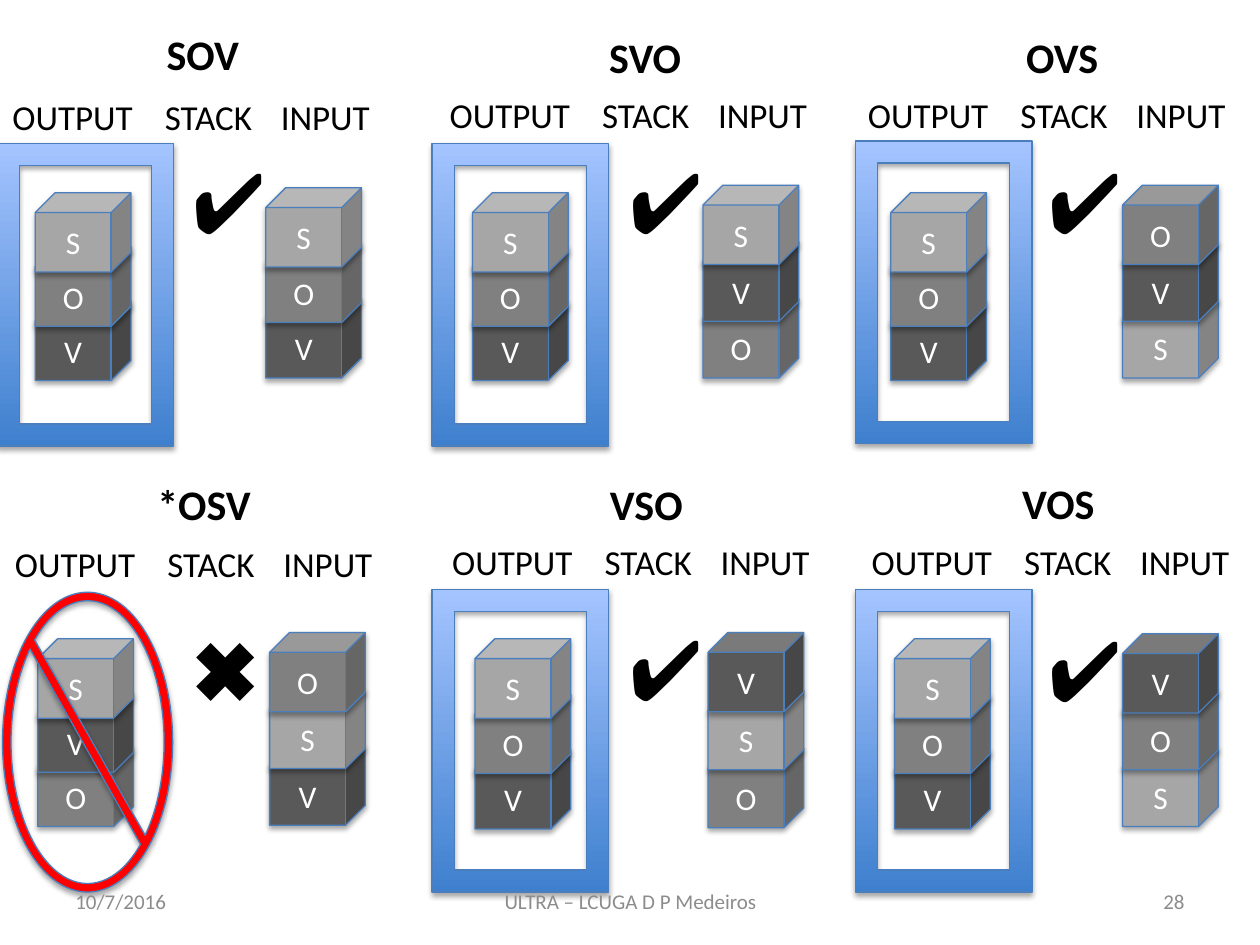
"""Build a slide comparing six word orders as stack-sorting diagrams."""
from dataclasses import dataclass

from lxml import etree
from pptx import Presentation
from pptx.dml.color import RGBColor
from pptx.enum.shapes import MSO_SHAPE
from pptx.enum.text import MSO_ANCHOR, PP_ALIGN
from pptx.oxml.ns import qn
from pptx.util import Inches, Pt

CUBE, FRAME, NO_SIGN = MSO_SHAPE.CUBE, MSO_SHAPE.FRAME, MSO_SHAPE.NO_SYMBOL
LEFT, CENTER, RIGHT = PP_ALIGN.LEFT, PP_ALIGN.CENTER, PP_ALIGN.RIGHT
TOP, MIDDLE = MSO_ANCHOR.TOP, MSO_ANCHOR.MIDDLE


@dataclass(frozen=True)
class Theme:
    font: str = "Calibri"
    mark_font: str = "Arial"
    title_size: int = 24
    label_size: int = 20
    cube_size: int = 18
    mark_size: int = 48
    footer_size: int = 12
    ink: str = "000000"
    cube_ink: str = "FFFFFF"
    footer_ink: str = "8C8C8C"
    outline: str = "4B7EBC"
    forbidden: str = "FF0000"
    frame_bottom: str = "3F80CE"
    frame_top: str = "A4C4FF"


@dataclass(frozen=True)
class Panel:
    order: str
    title_center: float
    title_top: float
    left: float
    label_top: float
    sign_left: float
    sign_top: float
    output_top: float
    output_step: float
    mark_left: float
    mark_top: float
    input_left: float
    input_top: float
    input_step: float
    output: str = "SOV"
    allowed: bool = True


THEME = Theme()
CUBE_FILLS = {"S": "A6A6A6", "O": "808080", "V": "595959"}
LABELS = (("OUTPUT", 0, 1.21), ("STACK", 1.21, 0.92), ("INPUT", 2.13, 1.08))
PANELS = (
    Panel("SOV", 1.61, 0.18, 0, 0.71, -0.02, 1.14, 1.53, 0.43,
          1.43, 1.14, 2.11, 1.49, 0.44),
    Panel("SVO", 5.12, 0.2, 3.47, 0.69, 3.43, 1.14, 1.53, 0.43,
          4.9, 1.14, 5.58, 1.47, 0.45),
    Panel("OVS", 8.43, 0.2, 6.79, 0.69, 6.79, 1.12, 1.53, 0.43,
          8.22, 1.14, 8.91, 1.47, 0.45),
    Panel("OSV", 1.62, 3.75, 0.02, 4.26, 0.02, 4.7, 5.07, 0.43,
          1.43, 4.85, 2.14, 5.02, 0.45, "SVO", False),
    Panel("VSO", 5.13, 3.75, 3.49, 4.24, 3.43, 4.68, 5.07, 0.44,
          4.9, 4.84, 5.62, 5.02, 0.46),
    Panel("VOS", 8.4, 3.74, 6.82, 4.24, 6.79, 4.68, 5.07, 0.44,
          8.22, 4.85, 8.91, 5.03, 0.45),
)
FOOTERS = (
    ("10/7/2016", 0.5, 2.33, LEFT),
    ("ULTRA – LCUGA D P Medeiros", 3.42, 3.17, CENTER),
    ("28", 7.17, 2.33, RIGHT),
)


def write(shape, text: str, size: int, color: str, align=LEFT, anchor=TOP,
          font: str = THEME.font, bold: bool = False) -> None:
    """Put one formatted line of text in a shape."""
    frame = shape.text_frame
    frame.word_wrap = True
    frame.vertical_anchor = anchor
    para = frame.paragraphs[0]
    para.alignment = align
    span = para.add_run()
    span.text = text
    for name, value in {"name": font, "size": Pt(size), "bold": bold}.items():
        setattr(span.font, name, value)
    span.font.color.rgb = RGBColor.from_string(color)


def add_text(page, box: tuple, text: str, size: int, color: str, **format_values) -> None:
    """Add a text box at left, top, width, height."""
    write(page.shapes.add_textbox(*map(Inches, box)), text, size, color, **format_values)


def add_solid(page, kind, box: tuple, fill: str):
    """Add an outlined preset shape with a soft shadow below it."""
    shape = page.shapes.add_shape(kind, *map(Inches, box))
    shape.fill.solid()
    shape.fill.fore_color.rgb = RGBColor.from_string(fill)
    shape.line.color.rgb = RGBColor.from_string(THEME.outline)
    shape.line.width = Pt(0.75)
    shape.shadow.inherit = False
    effects = shape.element.spPr.find(qn("a:effectLst"))
    shadow = etree.SubElement(effects, qn("a:outerShdw"), blurRad=str(Pt(3.1)),
                              dist=str(Pt(1.8)), dir="5400000", rotWithShape="0")
    color = etree.SubElement(shadow, qn("a:srgbClr"), val="000000")
    etree.SubElement(color, qn("a:alpha"), val="35000")
    return shape


def add_stack(page, letters: str, left: float, top: float, step: float) -> None:
    """Pile up cubes from the bottom, reading downwards."""
    for level, letter in reversed(list(enumerate(letters))):
        cube = add_solid(page, CUBE, (left, top + level * step, 0.76, 0.63), CUBE_FILLS[letter])
        write(cube, letter, THEME.cube_size, THEME.cube_ink, CENTER, MIDDLE)


def add_sign(page, panel: Panel) -> None:
    """Frame an allowed output or strike out a forbidden one."""
    if panel.allowed:
        sign = add_solid(page, FRAME, (panel.sign_left, panel.sign_top, 1.4, 2.4),
                         THEME.frame_bottom)
        sign.fill.gradient()
        sign.fill.gradient_angle = 90
        for stop, color in zip(sign.fill.gradient_stops, (THEME.frame_bottom, THEME.frame_top)):
            stop.color.rgb = RGBColor.from_string(color)
    else:
        sign = add_solid(page, NO_SIGN, (panel.sign_left, panel.sign_top, 1.35, 2.38),
                         THEME.forbidden)
        sign.adjustments[0] = 0.05


def add_panel(page, panel: Panel) -> None:
    """Draw one word order with its output, mark and input."""
    title = panel.order if panel.allowed else f"*{panel.order}"
    add_text(page, (panel.title_center - 0.5, panel.title_top, 1, 0.5), title,
             THEME.title_size, THEME.ink, align=CENTER, bold=True)
    for label, offset, width in LABELS:
        add_text(page, (panel.left + offset, panel.label_top, width, 0.44), label,
                 THEME.label_size, THEME.ink)
    add_stack(page, panel.output, panel.left + 0.28, panel.output_top, panel.output_step)
    add_sign(page, panel)
    add_text(page, (panel.mark_left, panel.mark_top, 1.44, 0.91),
             "✔" if panel.allowed else "✖", THEME.mark_size, THEME.ink, font=THEME.mark_font)
    add_stack(page, panel.order, panel.input_left, panel.input_top, panel.input_step)


def main() -> None:
    """Build and save the deck."""
    deck = Presentation()
    deck.slide_width, deck.slide_height = Inches(10), Inches(7.5)
    page = deck.slides.add_slide(deck.slide_layouts[6])
    for panel in PANELS:
        add_panel(page, panel)
    for text, left, width, align in FOOTERS:
        add_text(page, (left, 6.95, width, 0.4), text, THEME.footer_size,
                 THEME.footer_ink, align=align, anchor=MIDDLE)
    deck.save("out.pptx")


if __name__ == "__main__":
    main()
